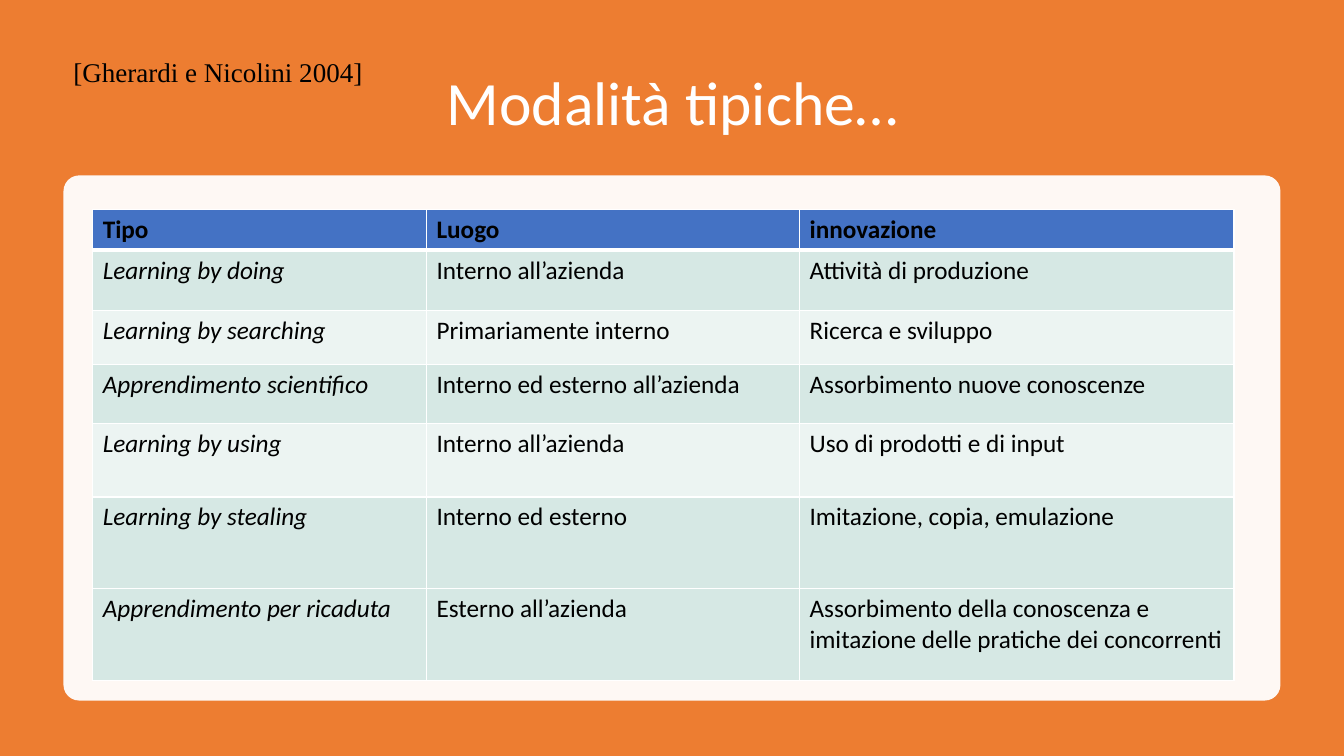
"""Build a slide with a table of typical learning modes."""
from lxml import etree
from pptx import Presentation
from pptx.dml.color import RGBColor
from pptx.enum.shapes import MSO_SHAPE
from pptx.enum.text import MSO_ANCHOR, PP_ALIGN
from pptx.oxml.ns import qn
from pptx.util import Inches, Pt

TITLE = "Modalità tipiche…"
CITATION = "[Gherardi e Nicolini 2004]"
HEADER = ("Tipo", "Luogo", "innovazione")
LEARNING_MODES = [
    ("Learning by doing", "Interno all’azienda", "Attività di produzione"),
    ("Learning by searching", "Primariamente interno", "Ricerca e sviluppo"),
    ("Apprendimento scientifico", "Interno ed esterno all’azienda",
     "Assorbimento nuove conoscenze"),
    ("Learning by using", "Interno all’azienda", "Uso di prodotti e di input"),
    ("Learning by stealing", "Interno ed esterno", "Imitazione, copia, emulazione"),
    ("Apprendimento per ricaduta", "Esterno all’azienda",
     "Assorbimento della conoscenza e imitazione delle pratiche dei concorrenti"),
]
COLUMN_WIDTHS = (3.31, 3.7, 4.31)
ROW_HEIGHTS = (0.39, 0.6, 0.54, 0.58, 0.73, 0.91, 0.91)

ORANGE = RGBColor(0xED, 0x7D, 0x31)
WHITE = RGBColor(0xFF, 0xFF, 0xFF)
BLACK = RGBColor(0x00, 0x00, 0x00)
BLUE = RGBColor(0x44, 0x72, 0xC4)
MINT = RGBColor(0xD6, 0xE8, 0xE4)
PALE_MINT = RGBColor(0xEC, 0xF4, 0xF2)
ROW_FILLS = (BLUE, MINT, PALE_MINT, MINT, PALE_MINT, MINT, MINT)

RECTANGLE, ROUNDED = MSO_SHAPE.RECTANGLE, MSO_SHAPE.ROUNDED_RECTANGLE
MIDDLE, CENTER = MSO_ANCHOR.MIDDLE, PP_ALIGN.CENTER
BODY_FONT, CITATION_FONT = "Calibri", "Times New Roman"


def add_run(paragraph, text, size, color, font=BODY_FONT, bold=False, italic=False):
    run = paragraph.add_run()
    run.text = text
    run.font.name, run.font.size = font, Pt(size)
    run.font.bold, run.font.italic = bold, italic
    run.font.color.rgb = color


def add_panel(slide, kind, box, color):
    panel = slide.shapes.add_shape(kind, *map(Inches, box))
    panel.shadow.inherit = False
    panel.fill.solid()
    panel.fill.fore_color.rgb = color
    panel.line.fill.background()
    return panel


def add_text_box(slide, box):
    frame = slide.shapes.add_textbox(*map(Inches, box)).text_frame
    frame.word_wrap = True
    return frame


def set_borders(cell, top, bottom):
    properties = cell._tc.get_or_add_tcPr()
    widths = {"a:lnL": 1, "a:lnR": 1, "a:lnT": top, "a:lnB": bottom}
    for position, (tag, width) in enumerate(widths.items()):
        line = etree.Element(qn(tag), w=str(Pt(width)))
        fill = etree.SubElement(line, qn("a:solidFill"))
        etree.SubElement(fill, qn("a:srgbClr"), val=str(WHITE))
        properties.insert(position, line)


def add_learning_table(slide):
    rows = [HEADER, *LEARNING_MODES]
    table = slide.shapes.add_table(
        len(rows), len(HEADER), Inches(0.92), Inches(2.08),
        Inches(sum(COLUMN_WIDTHS)), Inches(sum(ROW_HEIGHTS))).table
    for column, width in zip(table.columns, COLUMN_WIDTHS):
        column.width = Inches(width)
    for row_index, texts in enumerate(rows):
        table.rows[row_index].height = Inches(ROW_HEIGHTS[row_index])
        is_header = row_index == 0
        for column_index, text in enumerate(texts):
            cell = table.cell(row_index, column_index)
            cell.fill.solid()
            cell.fill.fore_color.rgb = ROW_FILLS[row_index]
            set_borders(cell, 3 if row_index == 1 else 1, 3 if is_header else 1)
            add_run(cell.text_frame.paragraphs[0], text, 18, BLACK, bold=is_header,
                    italic=column_index == 0 and not is_header)


def main():
    presentation = Presentation()
    presentation.slide_width, presentation.slide_height = Inches(13.33), Inches(7.5)
    slide = presentation.slides.add_slide(presentation.slide_layouts[6])

    add_panel(slide, RECTANGLE, (0, 0, 13.33, 7.5), ORANGE)

    title = add_text_box(slide, (0.92, 0.5, 11.5, 1.1))
    title.vertical_anchor = MIDDLE
    title.paragraphs[0].alignment = CENTER
    title.paragraphs[0].line_spacing = 0.9
    add_run(title.paragraphs[0], TITLE, 44, WHITE)

    card = add_panel(slide, ROUNDED, (0.63, 1.74, 12.07, 5.21), WHITE)
    card.adjustments[0] = 0.03
    card_color = card.fill._xPr.find(qn("a:solidFill"))[0]
    etree.SubElement(card_color, qn("a:alpha"), val="95000")

    add_learning_table(slide)

    citation = add_text_box(slide, (0.63, 0.5, 4.82, 0.43))
    citation.paragraphs[0].space_after = Pt(6)
    add_run(citation.paragraphs[0], CITATION, 19.3, BLACK, CITATION_FONT)

    presentation.save("out.pptx")


if __name__ == "__main__":
    main()
